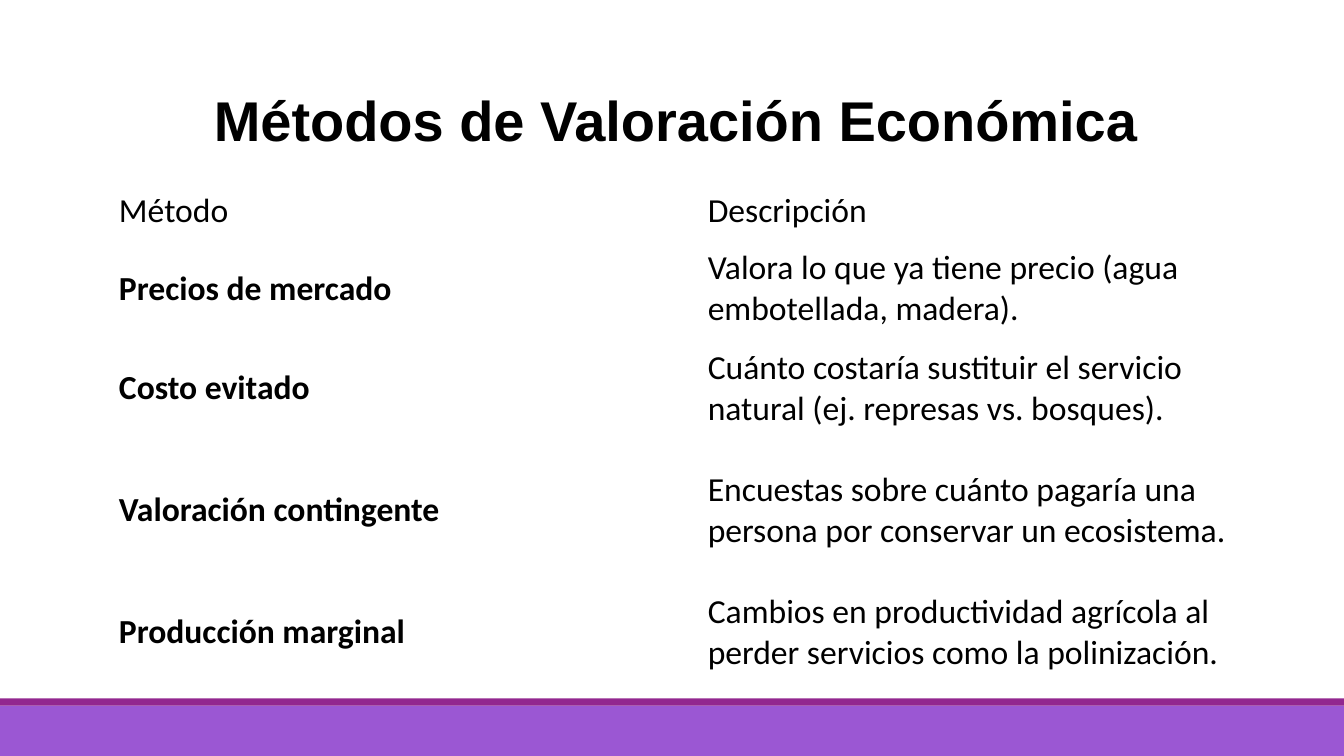
from pptx import Presentation
from pptx import util as u
from pptx.dml import color
from pptx.enum import shapes, text as t

COLOURS = {"ink": "000000", "violet": "9B57D3", "plum": "92278F"}
ROW_HEIGHTS = [0.55, 0.99, 0.99, 1.43, 0.99]
METHODS = [
    ("Método", "Descripción"),
    ("Precios de mercado",
     "Valora lo que ya tiene precio (agua embotellada, madera)."),
    ("Costo evitado",
     "Cuánto costaría sustituir el servicio natural (ej. represas vs. bosques)."),
    ("Valoración contingente",
     "Encuestas sobre cuánto pagaría una persona por conservar un ecosistema."),
    ("Producción marginal",
     "Cambios en productividad agrícola al perder servicios como la polinización."),
]


def colour(name):
    return color.RGBColor.from_string(COLOURS[name])


def write(frame, text, font="Calibri", size=24, bold=False, ink="ink"):
    para = frame.paragraphs[0]
    para.alignment = t.PP_ALIGN.LEFT
    span = para.add_run()
    span.text = text
    span.font.name = font
    span.font.size = u.Pt(size)
    span.font.bold = bold
    span.font.color.rgb = colour(ink)


def add_bar(page, top, height, fill):
    bar = page.shapes.add_shape(
        shapes.MSO_SHAPE.RECTANGLE, 0, u.Inches(top), u.Inches(13.33), u.Inches(height))
    bar.shadow.inherit = False
    bar.fill.solid()
    bar.fill.fore_color.rgb = colour(fill)
    bar.line.fill.background()


def add_title(page, text):
    title = page.shapes.title
    title.left, title.top = u.Inches(2.02), u.Inches(0.74)
    title.width, title.height = u.Inches(9.46), u.Inches(1.08)
    frame = title.text_frame
    frame.word_wrap = False
    frame.auto_size = t.MSO_AUTO_SIZE.NONE
    frame.vertical_anchor = t.MSO_ANCHOR.TOP
    frame.margin_top = u.Inches(0.11)
    write(frame, text, font="Arial", size=40, bold=True)


def add_methods_table(page, rows):
    table = page.shapes.add_table(
        len(rows), 2, u.Inches(1.08), u.Inches(1.82),
        u.Inches(11.68), u.Inches(sum(ROW_HEIGHTS))).table
    table.first_row = False
    table.horz_banding = False
    for column in table.columns:
        column.width = u.Inches(5.84)
    for row_index, (values, height) in enumerate(zip(rows, ROW_HEIGHTS)):
        table.rows[row_index].height = u.Inches(height)
        for column_index, value in enumerate(values):
            cell = table.cell(row_index, column_index)
            cell.fill.background()
            cell.vertical_anchor = t.MSO_ANCHOR.MIDDLE
            write(cell.text_frame, value, bold=row_index > 0 and column_index == 0)


def main():
    deck = Presentation()
    deck.slide_width, deck.slide_height = u.Inches(13.33), u.Inches(7.5)
    page = deck.slides.add_slide(deck.slide_layouts[5])
    add_bar(page, 7, 0.5, "violet")
    add_bar(page, 6.93, 0.07, "plum")
    add_methods_table(page, METHODS)
    add_title(page, "Métodos de Valoración Económica")
    deck.save("out.pptx")


if __name__ == "__main__":
    main()
